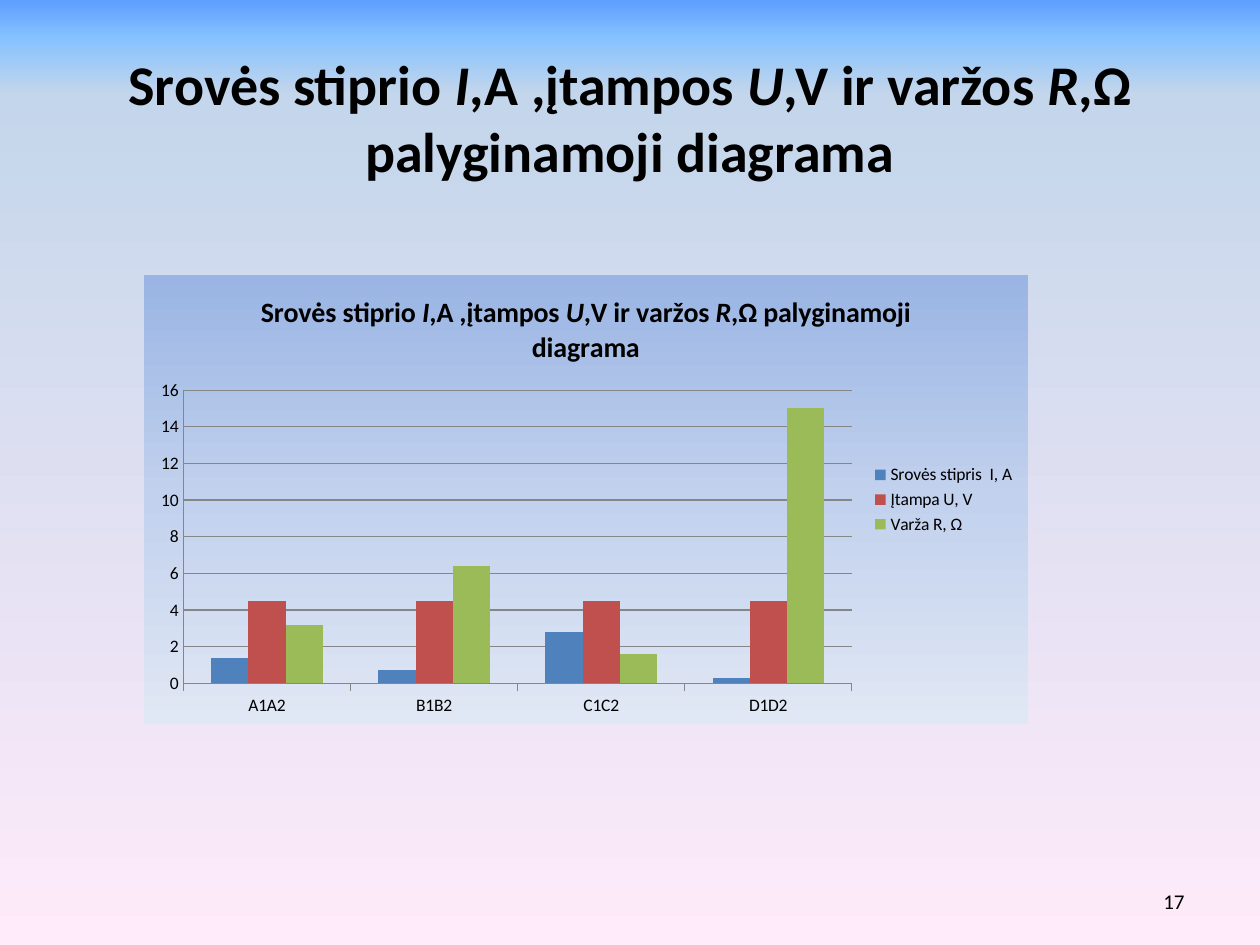
from lxml.etree import SubElement
from pptx import Presentation
from pptx.chart.data import CategoryChartData
from pptx.dml.color import RGBColor
from pptx.enum.chart import XL_CHART_TYPE, XL_LEGEND_POSITION, XL_TICK_MARK
from pptx.enum.text import MSO_ANCHOR, PP_ALIGN
from pptx.oxml import parse_xml
from pptx.oxml.ns import nsdecls, qn
from pptx.util import Pt

HEADING = [("Srovės stiprio ", False), ("I", True), (",A ,įtampos ", False),
           ("U", True), (",V ir varžos ", False), ("R", True),
           (",Ω palyginamoji diagrama", False)]
CIRCUITS = ["A1A2", "B1B2", "C1C2", "D1D2"]
MEASUREMENTS = [
    ("Srovės stipris  I, A", [1.4, 0.7, 2.8, 0.3], "4F81BD"),
    ("Įtampa U, V", [4.5, 4.5, 4.5, 4.5], "C0504D"),
    ("Varža R, Ω", [3.2, 6.4, 1.6, 15], "9BBB59"),
]
SKY = [(0, "5E9EFF"), (4, "85C2FF"), (10, "C4D6EB"), (100, "FFEBFA")]
PANEL = [(0, "9AB5E4"), (50, "C2D1ED"), (100, "E1E8F5")]


def color(value):
    return RGBColor.from_string(value)


def vertical_gradient(stops):
    stop_xml = "".join(
        f'<a:gs pos="{percent * 1000}"><a:srgbClr val="{value}"/></a:gs>'
        for percent, value in stops)
    return parse_xml(
        f'<a:gradFill {nsdecls("a")} rotWithShape="1"><a:gsLst>{stop_xml}</a:gsLst>'
        '<a:lin ang="5400000" scaled="0"/></a:gradFill>')


class SlideBuilder:
    font_name = "Calibri"
    ink = "000000"
    rule = "868686"

    def __init__(self, slide):
        self.slide = slide

    def style(self, font, size, bold=False, italic=False):
        font.name, font.size = self.font_name, Pt(size)
        font.bold, font.italic = bold, italic
        font.color.rgb = color(self.ink)

    def write_heading(self, paragraph, size):
        for text, italic in HEADING:
            run = paragraph.add_run()
            run.text = text
            self.style(run.font, size, bold=True, italic=italic)

    def background(self, stops):
        self.slide.background.fill.solid()
        properties = self.slide.element.xpath(".//p:bgPr")[0]
        properties.replace(properties[0], vertical_gradient(stops))

    def title(self, left, top, width, height):
        title = self.slide.shapes.title
        title.left, title.top = Pt(left), Pt(top)
        title.width, title.height = Pt(width), Pt(height)
        frame = title.text_frame
        frame.vertical_anchor = MSO_ANCHOR.MIDDLE
        frame.paragraphs[0].alignment = PP_ALIGN.CENTER
        self.write_heading(frame.paragraphs[0], 32)

    def page_number(self, number, left, top, width, height):
        box = self.slide.shapes.add_textbox(Pt(left), Pt(top), Pt(width), Pt(height))
        frame = box.text_frame
        frame.word_wrap = True
        frame.vertical_anchor = MSO_ANCHOR.MIDDLE
        frame.text = number
        frame.paragraphs[0].alignment = PP_ALIGN.RIGHT
        self.style(frame.paragraphs[0].runs[0].font, 12)

    def column_chart(self, left, top, width, height):
        data = CategoryChartData()
        data.categories = CIRCUITS
        for name, values, _ in MEASUREMENTS:
            data.add_series(name, values)
        chart = self.slide.shapes.add_chart(
            XL_CHART_TYPE.COLUMN_CLUSTERED, Pt(left), Pt(top), Pt(width), Pt(height), data).chart
        self.style(chart.font, 10)
        chart.has_title = True
        self.write_heading(chart.chart_title.text_frame.paragraphs[0], 16)
        chart.chart_title.include_in_layout = False
        chart.has_legend = True
        chart.legend.position = XL_LEGEND_POSITION.RIGHT
        chart.legend.include_in_layout = False

        plot = chart.plots[0]
        plot.gap_width, plot.overlap = 150, 0
        plot.vary_by_categories = False
        for series, (_, _, fill) in zip(plot.series, MEASUREMENTS):
            series.format.fill.solid()
            series.format.fill.fore_color.rgb = color(fill)

        scale = chart.value_axis
        scale.minimum_scale, scale.maximum_scale, scale.major_unit = 0, 16, 2
        scale.major_tick_mark = XL_TICK_MARK.NONE
        scale.has_major_gridlines = True
        chart.category_axis.major_tick_mark = XL_TICK_MARK.OUTSIDE
        for part in (scale, scale.major_gridlines, chart.category_axis):
            part.format.line.color.rgb = color(self.rule)
            part.format.line.width = Pt(0.75)
        self.chart_panel(chart, PANEL)

    def chart_panel(self, chart, stops):
        panel = parse_xml(f'<c:spPr {nsdecls("c", "a")}/>')
        panel.append(vertical_gradient(stops))
        SubElement(SubElement(panel, qn("a:ln")), qn("a:noFill"))
        chart.element.find(qn("c:chart")).addnext(panel)


def main():
    presentation = Presentation()
    presentation.slide_width, presentation.slide_height = Pt(720), Pt(540)
    slide = presentation.slides.add_slide(presentation.slide_layouts[5])
    builder = SlideBuilder(slide)
    builder.background(SKY)
    builder.title(36, 21.6, 648, 90)
    builder.column_chart(82, 157, 505.5, 257)
    builder.page_number("17", 516, 500.5, 168, 28.8)
    presentation.save("out.pptx")


if __name__ == "__main__":
    main()
